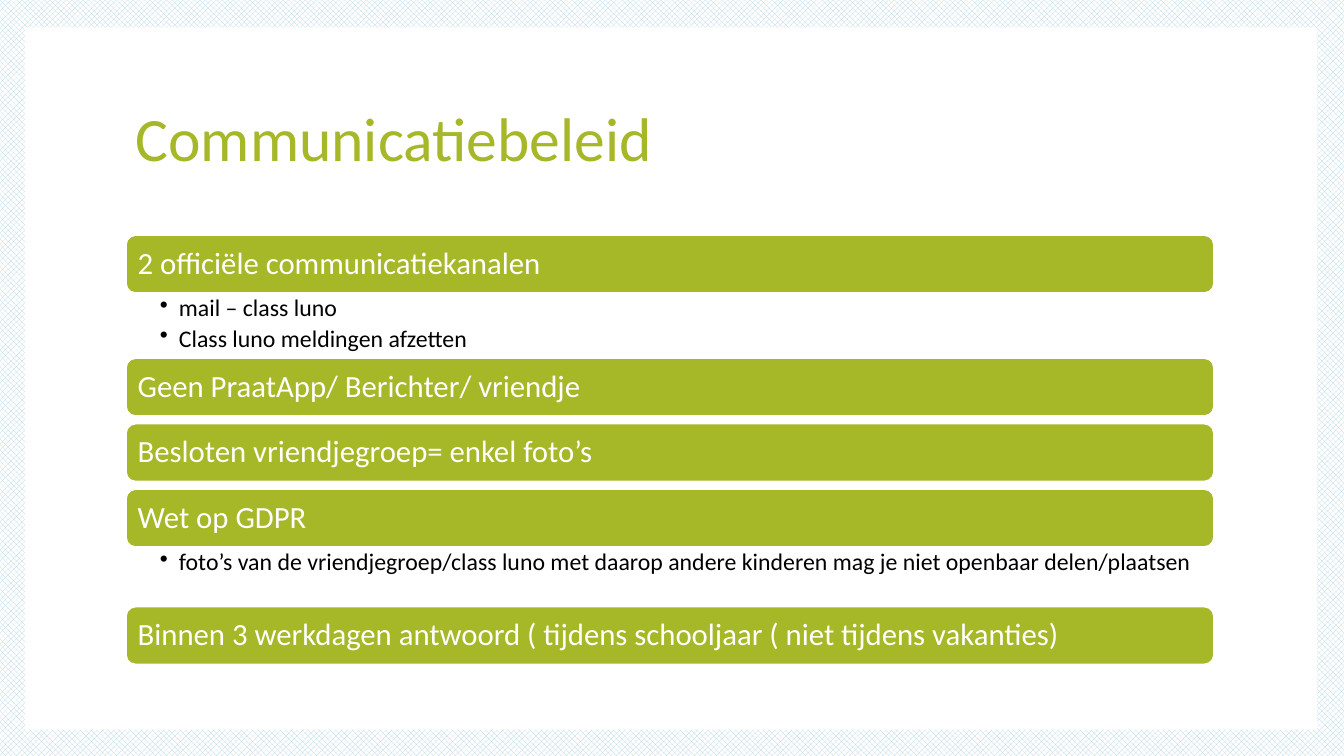
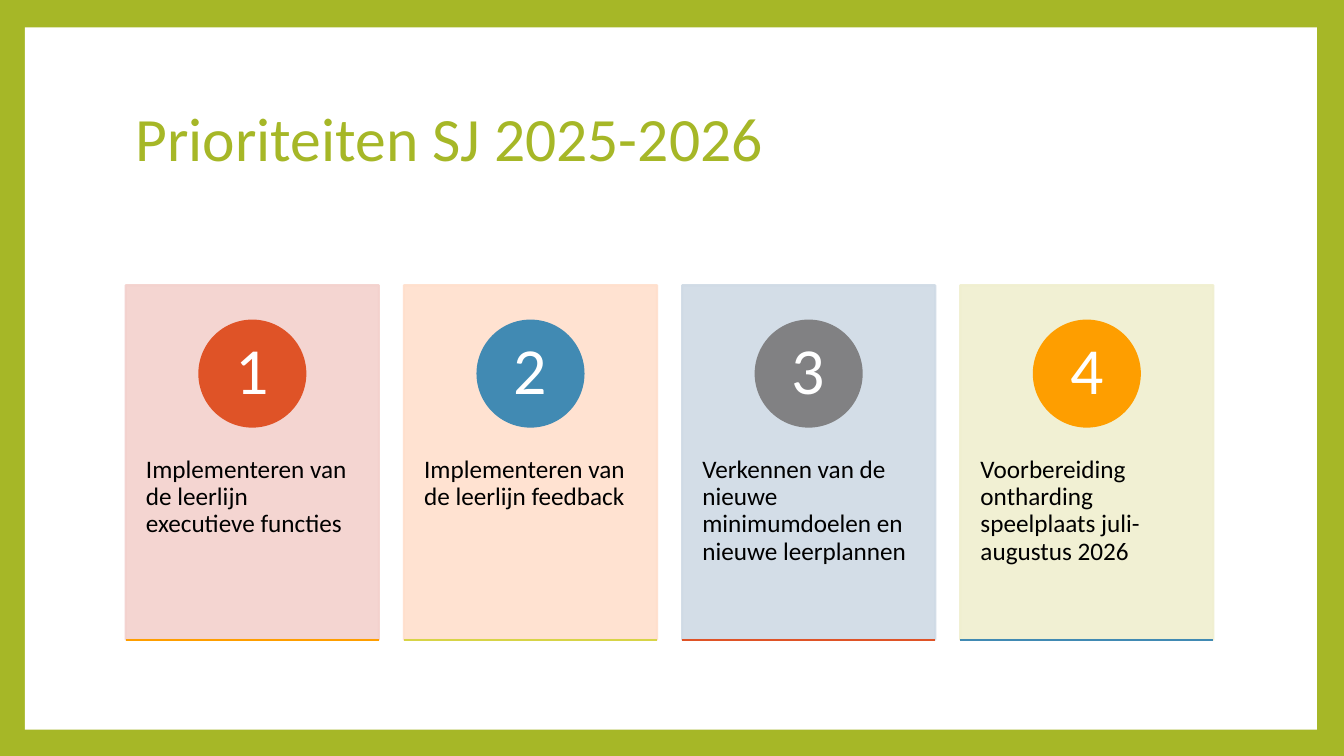
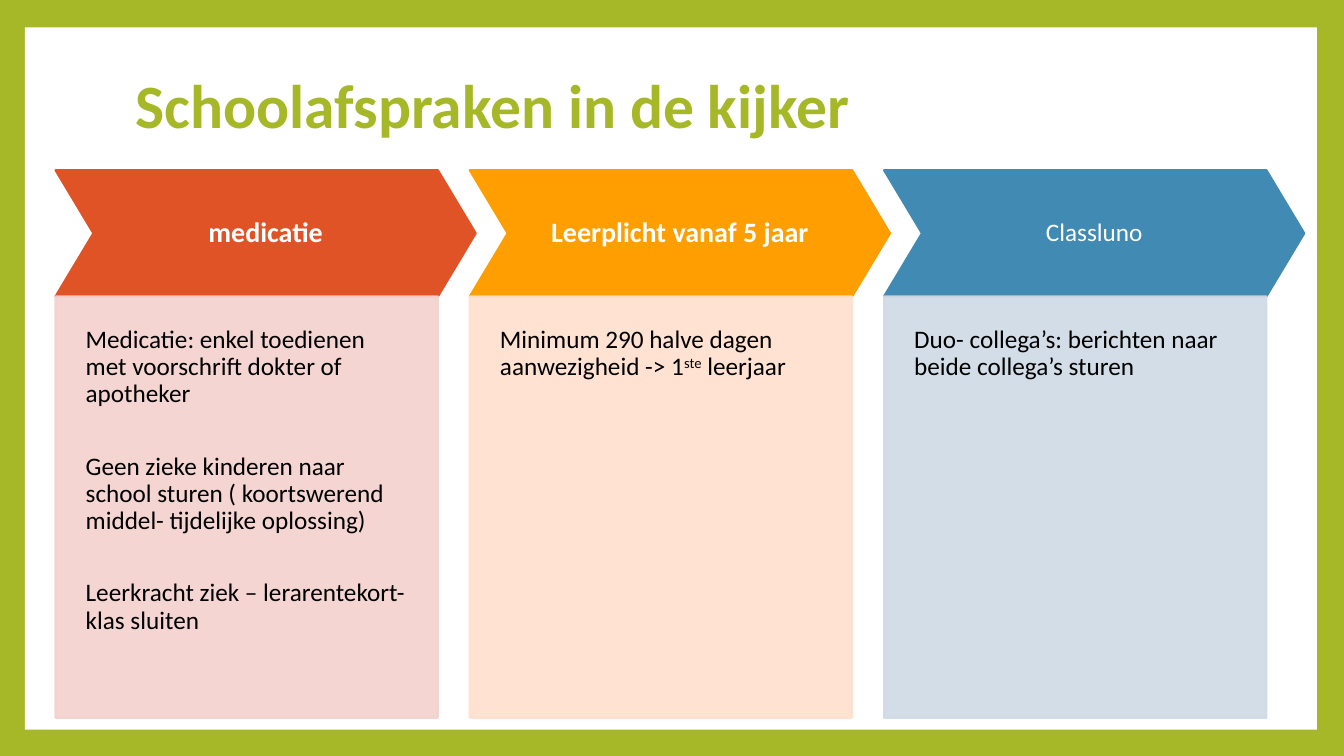
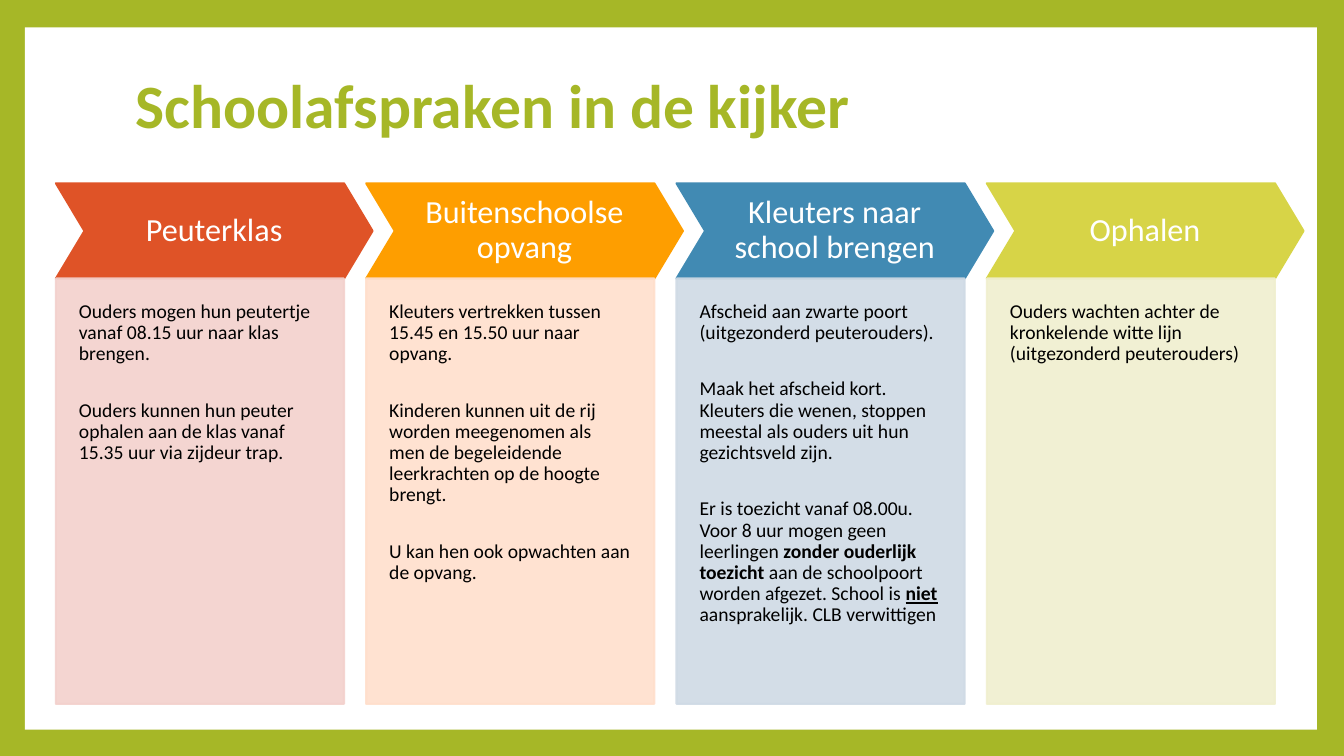
from lxml import etree
from pptx import Presentation
from pptx.dml.color import RGBColor
from pptx.enum import dml, shapes, text
from pptx.oxml.ns import qn
from pptx.util import Cm, Pt

WIDE, HIGH = 33.87, 19.05
FONT = "Calibri"
GREEN, WHITE, BLACK = "A6B727", "FFFFFF", "000000"
RED, GOLD, BLUE, LIME, GREY = "DF5327", "FE9E00", "418AB3", "D7D447", "818183"
TINTS = ["F3D1CD", "FFDFCC", "CFDAE5", "F0EFCF"]
HUES = [RED, GOLD, BLUE, LIME]
LEFT, SPAN = 3.17, 27.43
KIND = shapes.MSO_SHAPE
MID, TOP = text.MSO_ANCHOR.MIDDLE, text.MSO_ANCHOR.TOP
MAIN, CENTER = text.PP_ALIGN.LEFT, text.PP_ALIGN.CENTER
BOLD = {"bold": True}

BARS = [
    ("2 officiële communicatiekanalen", ["mail – class luno", "Class luno meldingen afzetten"], 1.63),
    ("Geen PraatApp/ Berichter/ vriendje", [], 0),
    ("Besloten vriendjegroep= enkel foto’s", [], 0),
    ("Wet op GDPR", ["foto’s van de vriendjegroep/class luno met daarop andere kinderen "
                     "mag je niet openbaar delen/plaatsen"], 1.49),
    ("Binnen 3 werkdagen antwoord ( tijdens schooljaar ( niet tijdens vakanties)", [], 0),
]

GOALS = [
    ("Implementeren van de leerlijn executieve functies", RED, GOLD),
    ("Implementeren van de leerlijn feedback", BLUE, LIME),
    ("Verkennen van de nieuwe minimumdoelen en nieuwe leerplannen", GREY, RED),
    ("Voorbereiding ontharding speelplaats juli-augustus 2026", GOLD, BLUE),
]

RULES = [
    ("medicatie", {"size": 20, **BOLD}, [
        "Medicatie: enkel toedienen met voorschrift dokter of apotheker",
        "Geen zieke kinderen naar school sturen ( koortswerend middel- tijdelijke oplossing)",
        "Leerkracht ziek – lerarentekort- klas sluiten"]),
    ("Leerplicht vanaf 5 jaar", {"size": 20, **BOLD}, [
        [("Minimum 290 halve dagen aanwezigheid -> 1", {}), ("ste", {"base": 30000}), (" leerjaar", {})]]),
    ("Classluno", {"size": 18}, ["Duo- collega’s: berichten naar beide collega’s sturen"]),
]

TIMES = [
    ("Peuterklas", {"size": 23}, [
        "Ouders mogen hun peutertje vanaf 08.15 uur naar klas brengen.",
        "Ouders kunnen hun peuter ophalen aan de klas vanaf 15.35 uur via zijdeur trap."]),
    ("Buitenschoolse opvang", {"size": 23}, [
        "Kleuters vertrekken tussen 15.45 en 15.50 uur naar opvang.",
        "Kinderen kunnen uit de rij worden meegenomen als men de begeleidende leerkrachten "
        "op de hoogte brengt.",
        "U kan hen ook opwachten aan de opvang."]),
    ("Kleuters naar school brengen", {"size": 23}, [
        "Afscheid aan zwarte poort (uitgezonderd peuterouders).",
        "Maak het afscheid kort. Kleuters die wenen, stoppen meestal als ouders uit hun "
        "gezichtsveld zijn.",
        [("Er is toezicht vanaf 08.00u. Voor 8 uur mogen geen leerlingen ", {}),
         ("zonder ouderlijk toezicht ", BOLD),
         ("aan de schoolpoort worden afgezet. School is ", {}),
         ("niet", {**BOLD, "underline": True}),
         (" aansprakelijk. CLB verwittigen", {})]]),
    ("Ophalen", {"size": 23}, [
        "Ouders wachten achter de kronkelende witte lijn (uitgezonderd peuterouders)"]),
]


def rgb(code):
    return RGBColor.from_string(code)


def assign(item, values):
    for name, value in values.items():
        setattr(item, name, value)


def add_run(para, words, size, color, base=None, **style):
    run = para.add_run()
    run.text = words
    assign(run.font, {"name": FONT, "size": Pt(size), **style})
    run.font.color.rgb = rgb(color)
    if base:
        run.font._element.set("baseline", str(base))


def write(shape, paras, size, color, pad, anchor=MID, align=MAIN, after=0.35, mark=False, **style):
    frame = shape.text_frame
    sides = ("margin_left", "margin_top", "margin_right", "margin_bottom")
    assign(frame, {"word_wrap": True, "vertical_anchor": anchor, **dict(zip(sides, map(Cm, pad)))})
    for i, runs in enumerate(paras):
        para = frame.add_paragraph() if i else frame.paragraphs[0]
        assign(para, {"alignment": align, "line_spacing": 0.9, "space_after": Pt(after * size)})
        if mark:
            bullet(para)
        for words, extra in [(runs, {})] if isinstance(runs, str) else runs:
            add_run(para, words, size, color, **{**style, **extra})


def bullet(para):
    props = para._p.get_or_add_pPr()
    props.set("marL", str(Cm(0.48)))
    props.set("indent", str(Cm(-0.48)))
    etree.SubElement(props, qn("a:buChar")).set("char", "•")


def add_box(slide, kind, place, fill, line=None, alpha=None):
    box = slide.shapes.add_shape(kind, *map(Cm, place))
    box.shadow.inherit = False
    box.fill.solid()
    box.fill.fore_color.rgb = rgb(fill)
    if line:
        box.line.color.rgb = rgb(line)
        box.line.width = Pt(1.5)
    else:
        box.line.fill.background()
    if alpha:
        for node in box._element.spPr.iter(qn("a:srgbClr")):
            etree.SubElement(node, qn("a:alpha")).set("val", str(alpha * 1000))
    return box


def add_text(slide, place, *args, **style):
    write(slide.shapes.add_textbox(*map(Cm, place)), *args, **style)


def add_line(slide, left, top, width, color):
    ends = map(Cm, (left, top, left + width, top))
    line = slide.shapes.add_connector(shapes.MSO_CONNECTOR.STRAIGHT, *ends)
    line.line.color.rgb = rgb(color)
    line.line.width = Pt(1.5)
    etree.SubElement(line._element.spPr, qn("a:effectLst"))


def add_slide(deck, title, top=1.7, check=False, **style):
    slide = deck.slides.add_slide(deck.slide_layouts[6])
    fill = slide.background.fill
    if check:
        fill.patterned()
        fill.pattern = dml.MSO_PATTERN.LARGE_CHECKER_BOARD
        fill.fore_color.rgb = rgb("B1D1E3")
        fill.back_color.rgb = rgb(WHITE)
    else:
        fill.solid()
        fill.fore_color.rgb = rgb(GREEN)
    add_box(slide, KIND.RECTANGLE, (0.63, 0.69, 32.56, 17.7), WHITE)
    add_text(slide, (LEFT, top, SPAN, 3.76), [title], 44, GREEN,
             (0.25, 0.13, 0.25, 0.13), after=0, **style)
    return slide


def add_bars(slide):
    top, high, gap = 5.92, 1.47, 0.18
    for head, notes, room in BARS:
        bar = add_box(slide, KIND.ROUNDED_RECTANGLE, (LEFT, top, SPAN, high), GREEN, WHITE)
        write(bar, [head], 22, WHITE, [0.23] * 4)
        top += high
        if notes:
            add_text(slide, (LEFT, top, SPAN, room), notes, 17, BLACK,
                     (0.86, 0.08, 0.43, 0.08), anchor=TOP, after=0.2, mark=True)
        top += room or gap


def add_cards(slide):
    top, wide, high, step, disc = 7.19, 6.38, 8.93, 7.01, 2.67
    for i, (words, hue, edge) in enumerate(GOALS):
        left = LEFT + i * step
        card = add_box(slide, KIND.RECTANGLE, (left, top, wide, high), TINTS[i], TINTS[i], 90)
        write(card, [words], 18, BLACK, (0.51, 4.32, 0.51, 0.91), anchor=TOP)
        ball = add_box(slide, KIND.OVAL, (left + (wide - disc) / 2, top + 0.89, disc, disc), hue, hue)
        write(ball, [str(i + 1)], 47, WHITE, (0.2, 0.03, 0.2, 0.03), align=CENTER)
        add_line(slide, left, top + high, wide, edge)


def add_steps(slide, items, start, step, wide, high, body, size, pad):
    left, top = start
    notch = 0.3
    for i, (head, style, paras) in enumerate(items):
        spot = left + i * step
        arrow = add_box(slide, KIND.CHEVRON, (spot, top, wide, high), HUES[i], HUES[i])
        arrow.adjustments[0] = notch
        write(arrow, [head], color=WHITE, pad=[pad] * 4, align=CENTER, **style)
        place = (spot, top + high, wide - notch * high, body)
        panel = add_box(slide, KIND.RECTANGLE, place, TINTS[i], TINTS[i], 90)
        inset = 2 * pad
        write(panel, paras, size, BLACK, (inset, inset, inset, 2 * inset), anchor=TOP, after=1.79)


def main():
    deck = Presentation()
    assign(deck, {"slide_width": Cm(WIDE), "slide_height": Cm(HIGH)})
    add_bars(add_slide(deck, "Communicatiebeleid", check=True))
    add_cards(add_slide(deck, "Prioriteiten SJ 2025-2026"))
    layouts = [
        (RULES, (1.4, 4.29), 10.44, 10.59, 3.18, 10.62, 18, 0.38),
        (TIMES, (1.41, 4.62), 7.82, 7.98, 2.4, 10.72, 14, 0.29),
    ]
    for layout in layouts:
        add_steps(add_slide(deck, "Schoolafspraken in de kijker", top=0.85, **BOLD), *layout)
    deck.save("out.pptx")


if __name__ == "__main__":
    main()
